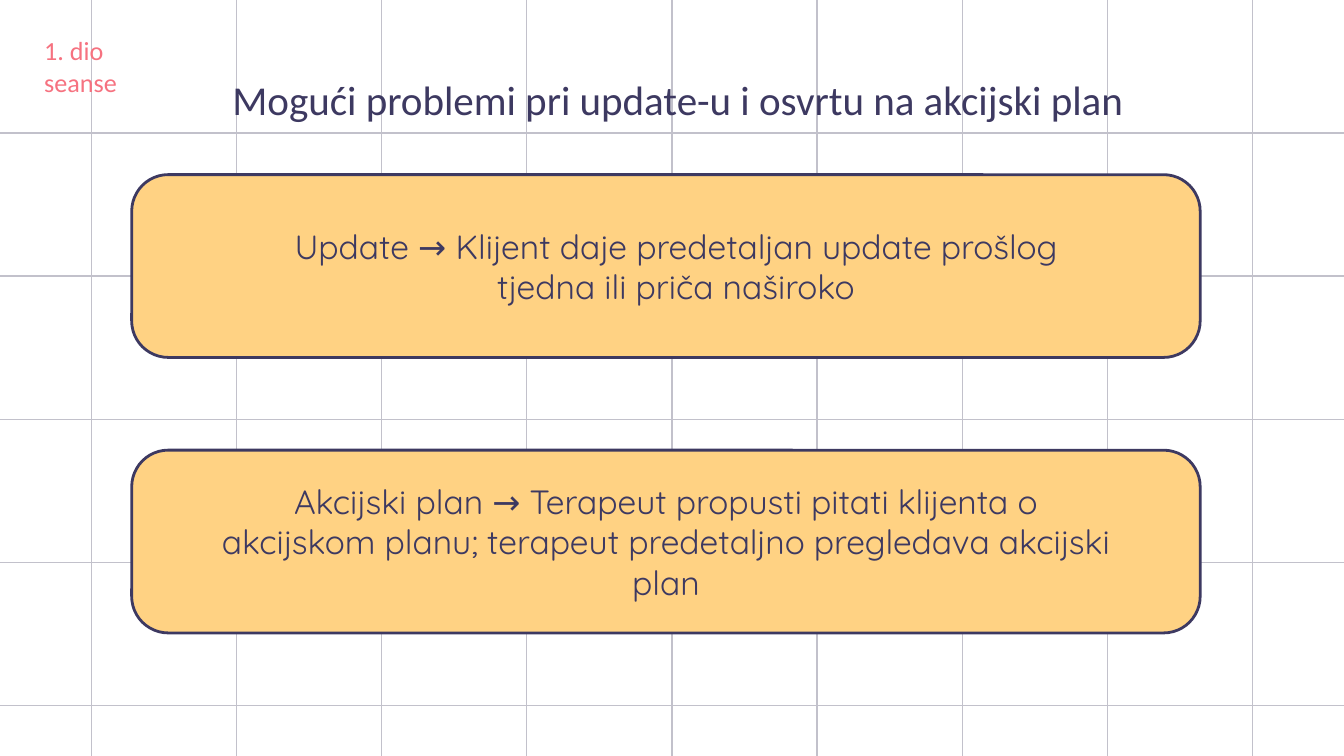
import pptx
import pptx.util
import pptx.dml.color
import pptx.enum.shapes
import pptx.enum.text
from lxml import etree

Inches, Pt = pptx.util.Inches, pptx.util.Pt
RGBColor = pptx.dml.color.RGBColor

INDIGO = RGBColor(0x3D, 0x39, 0x61)
APRICOT = RGBColor(0xFF, 0xD2, 0x83)
CORAL = RGBColor(0xF6, 0x72, 0x80)
GRID_GREY = RGBColor(0xC2, 0xC1, 0xCB)

# Widescreen slide, 16:9
WIDTH = 10
HEIGHT = WIDTH * 9 / 16
FIRST_COLUMN, COLUMN = 0.68, 1.08
FIRST_ROW, LAST_ROW = 0.99, 5.25
ROW = (LAST_ROW - FIRST_ROW) / 4

deck = pptx.Presentation()
deck.slide_width, deck.slide_height = Inches(WIDTH), Inches(HEIGHT)
slide = deck.slides.add_slide(deck.slide_layouts[5])
shapes = slide.shapes


def write(holder, words, font_name, size, colour):
    """Fill a text holder with one centred, middle-anchored paragraph."""
    frame = holder.text_frame
    frame.text = words
    frame.word_wrap = True
    frame.auto_size = pptx.enum.text.MSO_AUTO_SIZE.NONE
    frame.vertical_anchor = pptx.enum.text.MSO_ANCHOR.MIDDLE
    frame.margin_left = frame.margin_right = 0
    frame.margin_top = frame.margin_bottom = 0
    paragraph = frame.paragraphs[0]
    paragraph.alignment = pptx.enum.text.PP_ALIGN.CENTER
    font = paragraph.runs[0].font
    font.name, font.size = font_name, Pt(size)
    font.color.rgb = colour


# Background grid: nine verticals, five horizontals
verticals = [FIRST_COLUMN + COLUMN * i for i in range(9)]
horizontals = [FIRST_ROW + ROW * i for i in range(5)]
grid = [(x, 0, x, HEIGHT) for x in verticals]
grid += [(0, y, WIDTH, y) for y in horizontals]
for ends in grid:
    rule = shapes.add_connector(pptx.enum.shapes.MSO_CONNECTOR.STRAIGHT,
                                *[Inches(end) for end in ends])
    rule.line.color.rgb = GRID_GREY
    rule.line.width = Pt(0.75)
    etree.SubElement(rule._element.spPr, pptx.oxml.ns.qn("a:effectLst"))

# Heading, lifted above the grid
heading = shapes.title
heading.left, heading.top = Inches(0.83), Inches(0.42)
heading.width, heading.height = Inches(8.43), Inches(0.63)
write(heading, "Mogući problemi pri update-u i osvrtu na akcijski plan",
      "Calibri", 22, INDIGO)
shapes._spTree.append(heading._element)

# Problem cards: top, text left, text width, text
problems = [
    (1.3, 1.93, 6.2,
     "Update → Klijent daje predetaljan update prošlog tjedna "
     "ili priča naširoko"),
    (3.35, 1.61, 6.69,
     "Akcijski plan → Terapeut propusti pitati klijenta o akcijskom planu; "
     "terapeut predetaljno pregledava akcijski plan"),
]
for top, text_left, text_width, words in problems:
    card = shapes.add_shape(pptx.enum.shapes.MSO_SHAPE.ROUNDED_RECTANGLE,
                            Inches(0.98), Inches(top),
                            Inches(7.95), Inches(1.36))
    card.adjustments[0] = 0.2
    card.shadow.inherit = False
    card.fill.solid()
    card.fill.fore_color.rgb = APRICOT
    card.line.color.rgb = INDIGO
    card.line.width = Pt(1.5)
    problem = shapes.add_textbox(Inches(text_left), Inches(top + 0.33),
                                 Inches(text_width), Inches(0.7))
    write(problem, words, "Quicksand", 18, INDIGO)

# Session part label
session_part = shapes.add_textbox(Inches(0.23), Inches(0.21),
                                  Inches(1.19), Inches(0.34))
session_part.text_frame.text = "1. dio seanse"
session_part.text_frame.word_wrap = True
label_font = session_part.text_frame.paragraphs[0].runs[0].font
label_font.name, label_font.size = "Calibri", Pt(14)
label_font.color.rgb = CORAL

deck.save("out.pptx")
